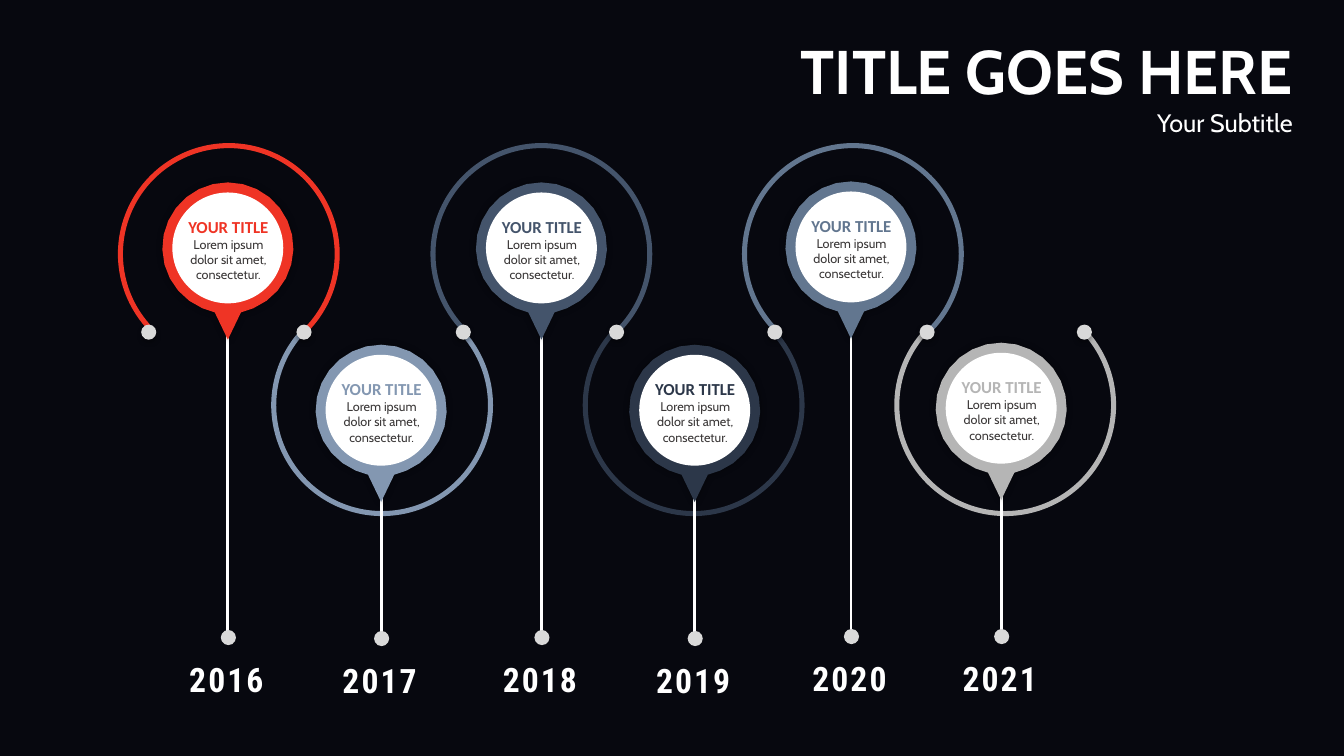
from math import cos, radians, sin

from lxml import etree
from pptx import Presentation
from pptx.dml.color import RGBColor
from pptx.enum.shapes import MSO_CONNECTOR, MSO_SHAPE
from pptx.enum.text import MSO_AUTO_SIZE, PP_ALIGN
from pptx.oxml.ns import qn
from pptx.util import Pt

PX = 9144  # EMU in one px, 100 px to the inch
OVAL, BLOCK_ARC = MSO_SHAPE.OVAL, MSO_SHAPE.BLOCK_ARC
STRAIGHT = MSO_CONNECTOR.STRAIGHT
CENTER, RIGHT = PP_ALIGN.CENTER, PP_ALIGN.RIGHT
GROW = MSO_AUTO_SIZE.SHAPE_TO_FIT_TEXT

COLORS = {
    "night": "07080F", "white": "FFFFFF", "dot": "D9D9D9", "body": "3B3838",
    "red": "EF3425", "sky": "8397B1", "slate": "44546B",
    "navy": "2C3749", "steel": "62768F", "silver": "B5B5B5",
}

# Year, colour, pin centre x and y, ring centre x, whether it is in the upper row
MILESTONES = [
    ("2016", "red", 226, 246, 227, True),
    ("2017", "sky", 378, 407, 379, False),
    ("2018", "slate", 537, 246, 537, True),
    ("2019", "navy", 689, 407, 688, False),
    ("2020", "steel", 844, 245, 846, True),
    ("2021", "silver", 993, 405, 997, False),
]
JOINTS = [140, 294, 452, 604, 761, 912, 1068]
DOT = 15


def color(name):
    return RGBColor.from_string(COLORS[name])


class Timeline:
    def __init__(self, slide):
        self.shapes = slide.shapes
        slide.background.fill.solid()
        slide.background.fill.fore_color.rgb = color("night")

    def paint(self, shape, fill, shadow=None):
        shape.fill.solid()
        shape.fill.fore_color.rgb = color(fill)
        shape.line.fill.background()
        shape.shadow.inherit = False
        if shadow:
            blur, distance, alpha = shadow
            effects = shape._element.spPr.find(qn("a:effectLst"))
            outer = etree.SubElement(
                effects, qn("a:outerShdw"), blurRad=str(Pt(blur)),
                dist=str(Pt(distance)), dir="5400000", algn="ctr", rotWithShape="0")
            black = etree.SubElement(outer, qn("a:srgbClr"), val="000000")
            etree.SubElement(black, qn("a:alpha"), val=str(alpha * 1000))

    def round_shape(self, kind, left, top, size, fill, shadow=None):
        shape = self.shapes.add_shape(kind, left * PX, top * PX, size * PX, size * PX)
        self.paint(shape, fill, shadow)
        return shape

    def ring(self, x, y, fill, upper):
        ring = self.round_shape(BLOCK_ARC, x - 110, y - 110, 220, fill)
        start, end = (138, 45) if upper else (318, 225)
        # Angles are stored in 60000ths of a degree, adjustments in 100000ths
        ring.adjustments[0] = start * 0.6
        ring.adjustments[1] = end * 0.6
        ring.adjustments[2] = 5 / 220

    def pin(self, x, y, fill):
        steps = 24
        angles = [radians(113 + 314 * i / steps) for i in range(steps + 1)]
        points = [(x + 65 * cos(a), y + 65 * sin(a)) for a in angles]
        points += [(x + 13, y + 64), (x, y + 91), (x - 13, y + 64)]
        scaled = [(round(px * PX), round(py * PX)) for px, py in points]
        builder = self.shapes.build_freeform(*scaled[0], scale=1.0)
        builder.add_line_segments(scaled[1:], close=True)
        self.paint(builder.convert_to_shape(), fill, (5, 0, 40))
        self.round_shape(OVAL, x - 55, y - 55, 110, "white")

    def stem(self, x, top, bottom):
        stem = self.shapes.add_connector(STRAIGHT, x * PX, top * PX, x * PX, bottom * PX)
        stem.line.color.rgb = color("white")
        stem.line.width = Pt(2)
        etree.SubElement(stem._element.spPr, qn("a:effectLst"))

    def text(self, box, lines, align, insets, spacing=None):
        """Each line is (text, font, size, colour, bold)."""
        frame = self.shapes.add_textbox(*[v * PX for v in box]).text_frame
        frame.word_wrap = True
        frame.auto_size = GROW
        frame.margin_left = frame.margin_right = insets[0] * PX
        frame.margin_top = frame.margin_bottom = insets[1] * PX
        for i, (words, face, size, ink, bold) in enumerate(lines):
            paragraph = frame.add_paragraph() if i else frame.paragraphs[0]
            paragraph.alignment = align
            run = paragraph.add_run()
            run.text = words
            if spacing:
                run._r.get_or_add_rPr().set("spc", str(spacing))
            font = paragraph.font
            font.name, font.size, font.bold = face, Pt(size), bold
            font.color.rgb = color(ink)


def main():
    deck = Presentation()
    deck.slide_width, deck.slide_height = 1333 * PX, 750 * PX
    timeline = Timeline(deck.slides.add_slide(deck.slide_layouts[6]))

    # Winding path
    for _, tint, _, _, ring_x, upper in MILESTONES:
        timeline.ring(ring_x, 252 if upper else 402, tint, upper)
    for left in JOINTS:
        timeline.round_shape(OVAL, left, 322, DOT, "dot", (3.5, 2.2, 32))

    # Milestones
    for year, tint, x, y, _, upper in MILESTONES:
        stem_top = y + (60 if upper else 64)
        dot_top = y + (379 if upper else 219)
        timeline.stem(x, stem_top, dot_top + 3)
        timeline.round_shape(OVAL, x - 7, dot_top, DOT, "dot")
        timeline.pin(x, y, tint)
        timeline.text((x - 49, y - 31, 99, 66), [
            ("YOUR TITLE", "Calibri", 12, tint, True),
            ("Lorem ipsum dolor sit amet, consectetur.", "Cabin", 9, "body", False),
        ], CENTER, (0, 0))
        timeline.text((x - 54, dot_top + 26, 105, 47), [
            (year, "Roboto Condensed", 24, "white", True),
        ], CENTER, (7, 3), spacing=150)

    # Heading
    timeline.text((690, 28, 602, 114), [
        ("TITLE GOES HERE", "Cabin", 44, "white", True),
        ("Your Subtitle", "Cabin", 18, "white", False),
    ], RIGHT, (10, 5))

    deck.save("out.pptx")


if __name__ == "__main__":
    main()
